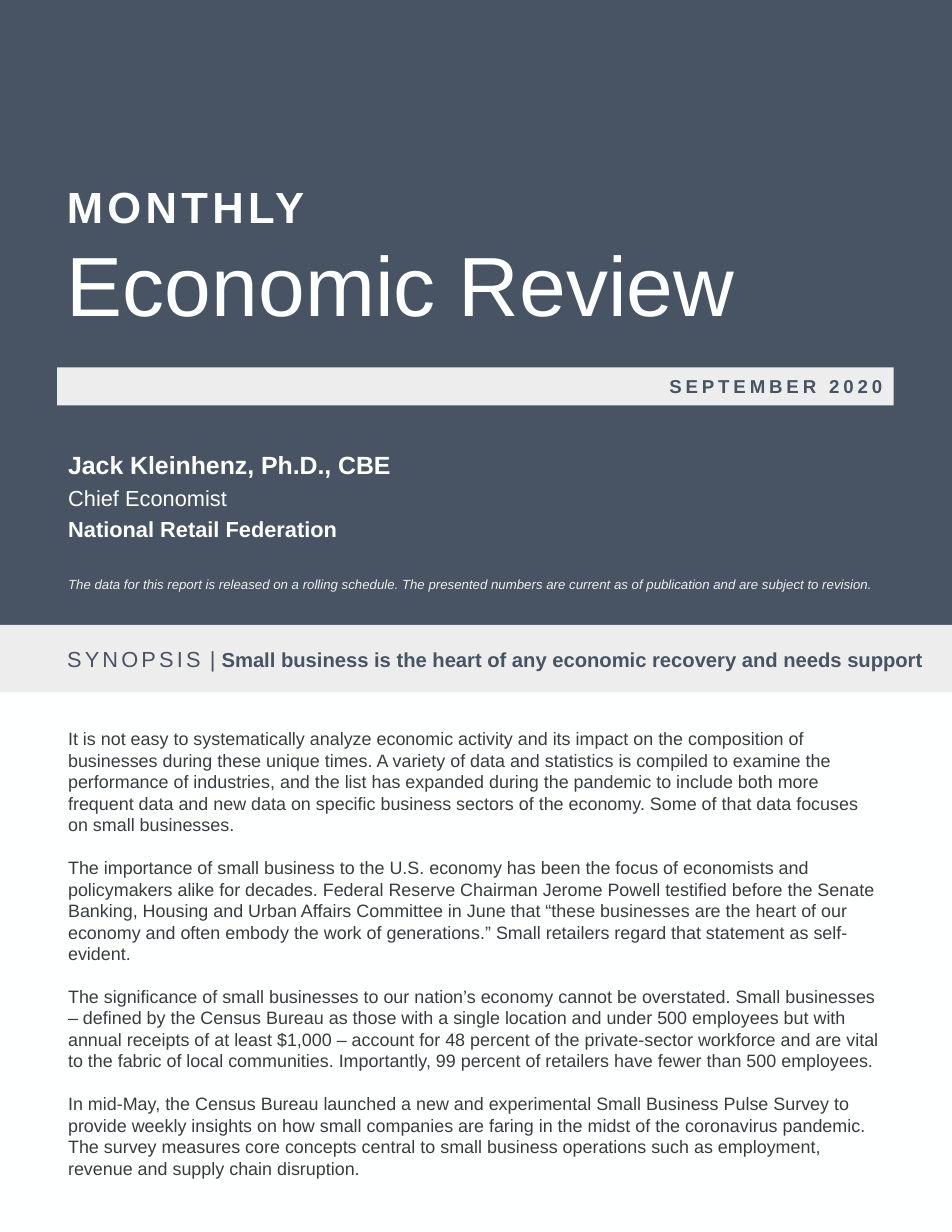
from dataclasses import dataclass

from pptx import Presentation
from pptx.dml.color import RGBColor
from pptx.enum.shapes import MSO_SHAPE
from pptx.enum.text import MSO_ANCHOR, PP_ALIGN
from pptx.util import Inches, Pt


@dataclass(frozen=True)
class Theme:
    font: str = "Arial"
    slate: RGBColor = RGBColor(0x48, 0x54, 0x63)
    mist: RGBColor = RGBColor(0xED, 0xED, 0xED)
    white: RGBColor = RGBColor(0xFE, 0xFF, 0xFF)
    ink: RGBColor = RGBColor(0x3B, 0x3A, 0x40)
    title: float = 54
    overline: float = 28
    name: float = 16
    label: float = 14
    headline: float = 13
    date: float = 12
    body: float = 11.5
    note: float = 8.5
    leading: float = 1.2


@dataclass(frozen=True)
class Span:
    text: str
    size: float
    bold: bool = False
    italic: bool = False
    tracking: float = 0


class ReportPage:
    def __init__(self, slide, theme):
        self.slide = slide
        self.theme = theme
        slide.background.fill.solid()
        slide.background.fill.fore_color.rgb = theme.white

    def band(self, left, top, width, height, color):
        """Add a plain filled rectangle."""
        shape = self.slide.shapes.add_shape(
            MSO_SHAPE.RECTANGLE, Inches(left), Inches(top), Inches(width), Inches(height))
        shape.shadow.inherit = False
        shape.fill.solid()
        shape.fill.fore_color.rgb = color
        shape.line.fill.background()
        shape.text_frame.vertical_anchor = MSO_ANCHOR.MIDDLE
        return shape

    def text(self, left, top, width, height, paragraphs, color, **spacing):
        """Add a wrapping text box."""
        box = self.slide.shapes.add_textbox(
            Inches(left), Inches(top), Inches(width), Inches(height))
        self.fill_frame(box.text_frame, paragraphs, color, **spacing)

    def fill_frame(self, frame, paragraphs, color, align=PP_ALIGN.LEFT, line=None, gap=0):
        """Fill a frame; each paragraph is a list of spans."""
        frame.word_wrap = True
        for index, spans in enumerate(paragraphs):
            para = frame.add_paragraph() if index else frame.paragraphs[0]
            para.alignment = align
            para.line_spacing = Pt(line or spans[0].size * self.theme.leading)
            if index and gap:
                para.space_before = Pt(gap)
            for span in spans:
                self.style(para.add_run(), span, color)

    def style(self, run, span, color):
        run.text = span.text
        run.font.name = self.theme.font
        run.font.size = Pt(span.size)
        run.font.bold = span.bold
        run.font.italic = span.italic
        run.font.color.rgb = color
        if span.tracking:
            run._r.get_or_add_rPr().set("spc", str(round(span.tracking * 100)))


SYNOPSIS = [
    "It is not easy to systematically analyze economic activity and its impact on the "
    "composition of businesses during these unique times. A variety of data and statistics "
    "is compiled to examine the performance of industries, and the list has expanded during "
    "the pandemic to include both more frequent data and new data on specific business "
    "sectors of the economy. Some of that data focuses on small businesses.",
    "The importance of small business to the U.S. economy has been the focus of economists "
    "and policymakers alike for decades. Federal Reserve Chairman Jerome Powell testified "
    "before the Senate Banking, Housing and Urban Affairs Committee in June that “these "
    "businesses are the heart of our economy and often embody the work of generations.” "
    "Small retailers regard that statement as self-evident.",
    "The significance of small businesses to our nation’s economy cannot be overstated. "
    "Small businesses – defined by the Census Bureau as those with a single location and "
    "under 500 employees but with annual receipts of at least $1,000 – account for 48 percent "
    "of the private-sector workforce and are vital to the fabric of local communities. "
    "Importantly, 99 percent of retailers have fewer than 500 employees.",
    "In mid-May, the Census Bureau launched a new and experimental Small Business Pulse "
    "Survey to provide weekly insights on how small companies are faring in the midst of the "
    "coronavirus pandemic. The survey measures core concepts central to small business "
    "operations such as employment, revenue and supply chain disruption.",
]
NOTE = ("The data for this report is released on a rolling schedule. The presented numbers "
        "are current as of publication and are subject to revision.")


def main():
    theme = Theme()
    deck = Presentation()
    deck.slide_width, deck.slide_height = Inches(8.5), Inches(11)
    page = ReportPage(deck.slides.add_slide(deck.slide_layouts[6]), theme)
    left, width = 0.51, 7.47

    # Cover panel and title
    page.band(0, 0, 8.5, 5.58, theme.slate)
    page.text(0.5, 1.56, 7.2, 1.51, [
        [Span("MONTHLY", theme.overline, bold=True, tracking=2.8)],
        [Span("Economic Review", theme.title)],
    ], theme.white)

    # Issue date
    date_bar = page.band(left, 3.28, width, 0.34, theme.mist)
    page.fill_frame(date_bar.text_frame, [
        [Span("SEPTEMBER 2020", theme.date, bold=True, tracking=2.5)],
    ], theme.slate, align=PP_ALIGN.RIGHT)

    # Author and data note
    page.text(left, 3.95, 5.38, 0.92, [
        [Span("Jack Kleinhenz, Ph.D., CBE", theme.name, bold=True)],
        [Span("Chief Economist", theme.label)],
        [Span("National Retail Federation", theme.label, bold=True)],
    ], theme.white, line=20.2)
    page.text(left, 5.1, width, 0.24, [[Span(NOTE, theme.note, italic=True)]], theme.mist)

    # Synopsis heading
    heading = page.band(0, 5.58, 8.5, 0.6, theme.mist)
    heading.text_frame.margin_left = Inches(0.6)
    page.fill_frame(heading.text_frame, [[
        Span("SYNOPSIS", theme.label, tracking=2),
        Span(" | ", theme.label),
        Span("Small business is the heart of any economic recovery and needs support",
             theme.headline, bold=True),
    ]], theme.slate)

    # Synopsis body, one line apart
    page.text(left, 6.45, width, 4.55, [[Span(text, theme.body)] for text in SYNOPSIS],
              theme.ink, gap=theme.body * theme.leading)

    deck.save("out.pptx")


if __name__ == "__main__":
    main()
